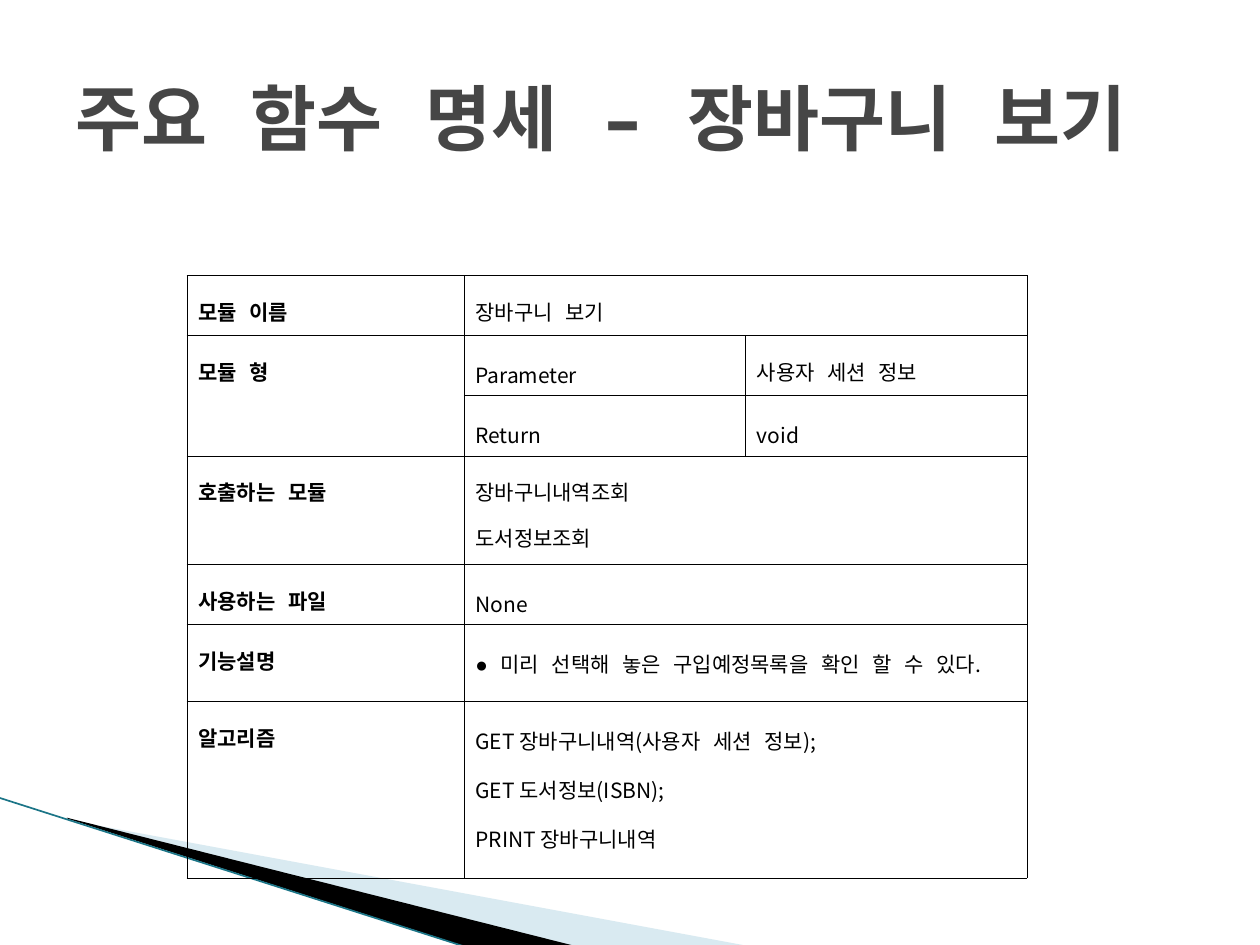
from lxml import etree
from pptx import Presentation
from pptx import util as u
from pptx.dml.color import RGBColor
from pptx.enum import shapes, text
from pptx.oxml import ns

Pt = u.Pt
BLACK = RGBColor(0x00, 0x00, 0x00)
TITLE_GREY = RGBColor(0x46, 0x46, 0x46)
PALE_BLUE = RGBColor(0xA0, 0xCB, 0xDC)
TEAL = RGBColor(0x1B, 0x75, 0x87)

BODY_FONT = "Noto Sans CJK KR"
TITLE_FONT = "Noto Sans Mono"
EAST_ASIAN_FONT = "Noto Sans Mono"

COLUMN_WIDTHS = [158.4, 160.8, 160.8]
ROW_HEIGHTS = [34.3, 34.3, 34.3, 62.2, 34.3, 44, 100.8]

# (row, column, rows spanned, columns spanned, lines)
CELLS = [
    (0, 0, 1, 1, ["모듈 이름"]),
    (0, 1, 1, 2, ["장바구니 보기"]),
    (1, 0, 2, 1, ["모듈 형"]),
    (1, 1, 1, 1, ["Parameter"]),
    (1, 2, 1, 1, ["사용자 세션 정보"]),
    (2, 1, 1, 1, ["Return"]),
    (2, 2, 1, 1, ["void"]),
    (3, 0, 1, 1, ["호출하는 모듈"]),
    (3, 1, 1, 2, ["장바구니내역조회", "도서정보조회"]),
    (4, 0, 1, 1, ["사용하는 파일"]),
    (4, 1, 1, 2, ["None"]),
    (5, 0, 1, 1, ["기능설명"]),
    (5, 1, 1, 2, ["● 미리 선택해 놓은 구입예정목록을 확인 할 수 있다."]),
    (6, 0, 1, 1, ["알고리즘"]),
    (6, 1, 1, 2, ["GET 장바구니내역(사용자 세션 정보);",
                  "GET 도서정보(ISBN);",
                  "PRINT 장바구니내역"]),
]


def write_text(frame, lines, *, size, font, color=BLACK, bold=False,
               align=None, spacing=None):
    """Write one paragraph per line, all in the same format."""
    for index, line in enumerate(lines):
        paragraph = frame.paragraphs[0] if index == 0 else frame.add_paragraph()
        paragraph.alignment = align
        paragraph.line_spacing = spacing
        run = paragraph.add_run()
        run.text = line
        run.font.size = Pt(size)
        run.font.bold = bold
        run.font.color.rgb = color
        run.font.name = font
        east_asian = etree.SubElement(run.font._element, ns.qn("a:ea"))
        east_asian.set("typeface", EAST_ASIAN_FONT)


def add_wedge(slide, points, color, opacity=100):
    corners = [(Pt(x), Pt(y)) for x, y in points]
    builder = slide.shapes.build_freeform(*corners[0])
    builder.add_line_segments(corners[1:], close=True)
    shape = builder.convert_to_shape()
    shape.shadow.inherit = False
    shape.line.fill.background()
    shape.fill.solid()
    shape.fill.fore_color.rgb = color
    if opacity < 100:
        color_element = shape._element.spPr.find(".//" + ns.qn("a:srgbClr"))
        alpha = etree.SubElement(color_element, ns.qn("a:alpha"))
        alpha.set("val", str(opacity * 1000))


def add_line(slide, start, end, color, width):
    line = slide.shapes.add_connector(
        shapes.MSO_CONNECTOR.STRAIGHT, *(Pt(value) for value in start + end))
    line.line.color.rgb = color
    line.line.width = Pt(width)
    etree.SubElement(line._element.spPr, ns.qn("a:effectLst"))


def add_title(slide, title):
    box = slide.shapes.add_textbox(Pt(36), Pt(21.6), Pt(648), Pt(90))
    frame = box.text_frame
    frame.word_wrap = True
    frame.vertical_anchor = text.MSO_ANCHOR.MIDDLE
    write_text(frame, [title], size=41, font=TITLE_FONT,
               color=TITLE_GREY, bold=True)


def set_borders(cell, color, width):
    properties = cell._tc.get_or_add_tcPr()
    for side in ("lnL", "lnR", "lnT", "lnB"):
        border = etree.SubElement(properties, ns.qn("a:" + side))
        border.set("w", str(Pt(width)))
        fill = etree.SubElement(border, ns.qn("a:solidFill"))
        etree.SubElement(fill, ns.qn("a:srgbClr")).set("val", str(color))


def add_specification_table(slide):
    table = slide.shapes.add_table(
        len(ROW_HEIGHTS), len(COLUMN_WIDTHS), Pt(106.8), Pt(157.5),
        Pt(sum(COLUMN_WIDTHS)), Pt(sum(ROW_HEIGHTS))).table
    table.first_row = False
    table.horz_banding = False
    for column, width in zip(table.columns, COLUMN_WIDTHS):
        column.width = Pt(width)
    for row, height in zip(table.rows, ROW_HEIGHTS):
        row.height = Pt(height)
    for cell in table.iter_cells():
        set_borders(cell, BLACK, 0.25)
        cell.fill.background()
        cell.margin_left = cell.margin_right = Pt(6.5)
        cell.margin_top = cell.margin_bottom = Pt(3.2)
    for row, column, row_span, column_span, lines in CELLS:
        cell = table.cell(row, column)
        if row_span > 1 or column_span > 1:
            cell.merge(table.cell(row + row_span - 1, column + column_span - 1))
        write_text(cell.text_frame, lines, size=12, font=BODY_FONT,
                   bold=column == 0, align=text.PP_ALIGN.JUSTIFY, spacing=1.6)


def main():
    presentation = Presentation()
    presentation.slide_width = Pt(720)
    presentation.slide_height = Pt(540)
    slide = presentation.slides.add_slide(presentation.slide_layouts[6])

    add_wedge(slide, [(39.6, 468.7), (428.4, 540.7), (328.3, 540.7), (39.6, 468)],
              PALE_BLUE, opacity=40)
    add_wedge(slide, [(38.2, 467.3), (329, 540.7), (267.8, 541.4), (38.9, 468)],
              BLACK)
    add_line(slide, (-0.7, 455.8), (267.1, 541.4), TEAL, 0.95)
    add_title(slide, "주요 함수 명세 – 장바구니 보기")
    add_specification_table(slide)

    presentation.save("out.pptx")


if __name__ == "__main__":
    main()
